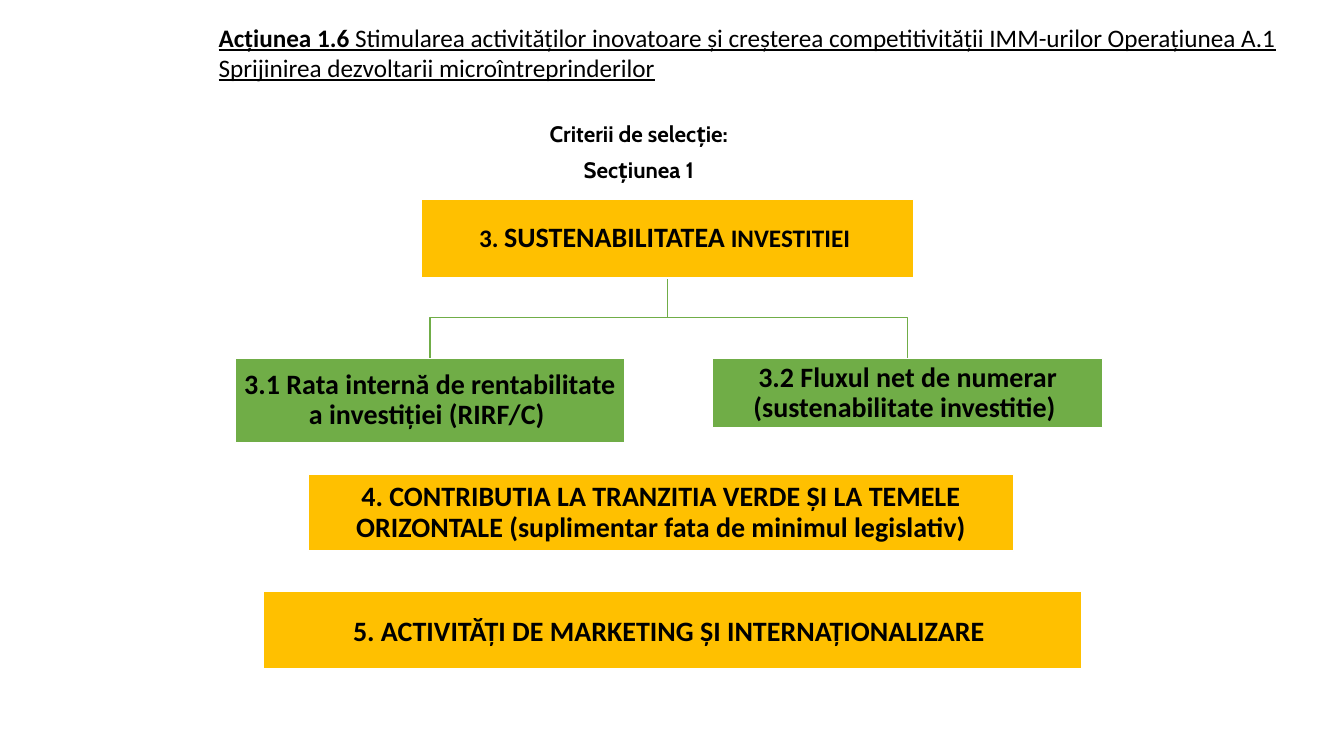
import pptx
import pptx.util
import pptx.dml.color
import pptx.enum.shapes
import pptx.enum.text

Cm = pptx.util.Cm
Pt = pptx.util.Pt
ALIGN = pptx.enum.text.PP_ALIGN
COLOURS = {"gold": "FFC000", "green": "70AD47", "white": "FFFFFF", "black": "000000"}

TITLE = [
    ("Acțiunea 1.6", True),
    (" Stimularea activităților inovatoare și creșterea competitivității IMM-urilor "
     "Operațiunea A.1 Sprijinirea dezvoltarii microîntreprinderilor", False),
]
SUBTITLE = ["Criterii de selecție:", "Secțiunea 1"]
CRITERIA = [
    ("gold", (10.62, 5.03, 12.4, 1.98), 0.9,
     [("3. ", 18), ("SUSTENABILITATEA", 20), (" INVESTITIEI ", 18)]),
    ("green", (5.92, 9.04, 9.83, 2.11), 0.9,
     [("3.1 Rata internă de rentabilitate a investiției (RIRF/C) ", 20)]),
    ("green", (17.96, 9.04, 9.83, 1.73), 0.9,
     [("3.2 Fluxul net de numerar (sustenabilitate investitie) ", 20)]),
    ("gold", (7.77, 11.96, 17.78, 1.93), 0.9,
     [("4. CONTRIBUTIA LA TRANZITIA VERDE ȘI LA TEMELE ORIZONTALE "
       "(suplimentar fata de minimul legislativ)", 20)]),
    ("gold", (6.63, 14.91, 20.62, 1.93), 1.0,
     [("5. ACTIVITĂȚI DE MARKETING ȘI INTERNAȚIONALIZARE ", 20)]),
]


def colour(name):
    return pptx.dml.color.RGBColor.from_string(COLOURS[name])


def style(para, size, face="Calibri"):
    para.font.name = face
    para.font.size = Pt(size)
    para.font.color.rgb = colour("black")


def add_text(page, left, top, width, height):
    box = page.shapes.add_textbox(Cm(left), Cm(top), Cm(width), Cm(height))
    box.text_frame.word_wrap = True
    return box.text_frame


def add_title(page):
    para = add_text(page, 5.26, 0.43, 28.4, 1.8).paragraphs[0]
    style(para, 18)
    para.font.underline = True
    for text, bold in TITLE:
        span = para.add_run()
        span.text = text
        span.font.bold = bold


def add_subtitle(page):
    frame = add_text(page, 5.84, 2.72, 20.52, 1.93)
    for index, text in enumerate(SUBTITLE):
        para = frame.add_paragraph() if index else frame.paragraphs[0]
        para.text = text
        para.alignment = ALIGN.CENTER
        para.line_spacing = 1.28
        if index:
            para.space_before = Pt(1)
        style(para, 16, "Cabin")
        para.font.bold = True


def add_branch(page, parent, child):
    start, end = [left + width / 2 for left, top, width, height in (parent, child)]
    top, bottom = parent[1] + parent[3], child[1]
    middle = (top + bottom) / 2 - 0.02
    corners = [(start, middle), (end, middle), (end, bottom)]
    builder = page.shapes.build_freeform(Cm(start), Cm(top))
    builder.add_line_segments([(Cm(x), Cm(y)) for x, y in corners], close=False)
    branch = builder.convert_to_shape()
    branch.shadow.inherit = False
    branch.fill.background()
    branch.line.color.rgb = colour("green")
    branch.line.width = Pt(1)


def add_criterion(page, fill, place, spacing, spans):
    kind = pptx.enum.shapes.MSO_SHAPE.RECTANGLE
    box = page.shapes.add_shape(kind, *map(Cm, place))
    box.shadow.inherit = False
    box.fill.solid()
    box.fill.fore_color.rgb = colour(fill)
    box.line.color.rgb = colour("white")
    box.line.width = Pt(1)
    frame = box.text_frame
    frame.word_wrap = True
    frame.vertical_anchor = pptx.enum.text.MSO_ANCHOR.MIDDLE
    frame.margin_left = frame.margin_right = Cm(0.03)
    frame.margin_top = frame.margin_bottom = Cm(0.03)
    para = frame.paragraphs[0]
    para.alignment = ALIGN.CENTER
    para.line_spacing = spacing
    style(para, 20)
    para.font.bold = True
    for text, size in spans:
        span = para.add_run()
        span.text = text
        if size != 20:
            span.font.size = Pt(size)


def main():
    deck = pptx.Presentation()
    deck.slide_width, deck.slide_height = Cm(33.87), Cm(19.05)
    page = deck.slides.add_slide(deck.slide_layouts[6])
    add_title(page)
    add_subtitle(page)
    root, *children = [place for fill, place, spacing, spans in CRITERIA[:3]]
    for child in reversed(children):
        add_branch(page, root, child)
    for criterion in CRITERIA:
        add_criterion(page, *criterion)
    deck.save("out.pptx")


if __name__ == "__main__":
    main()
